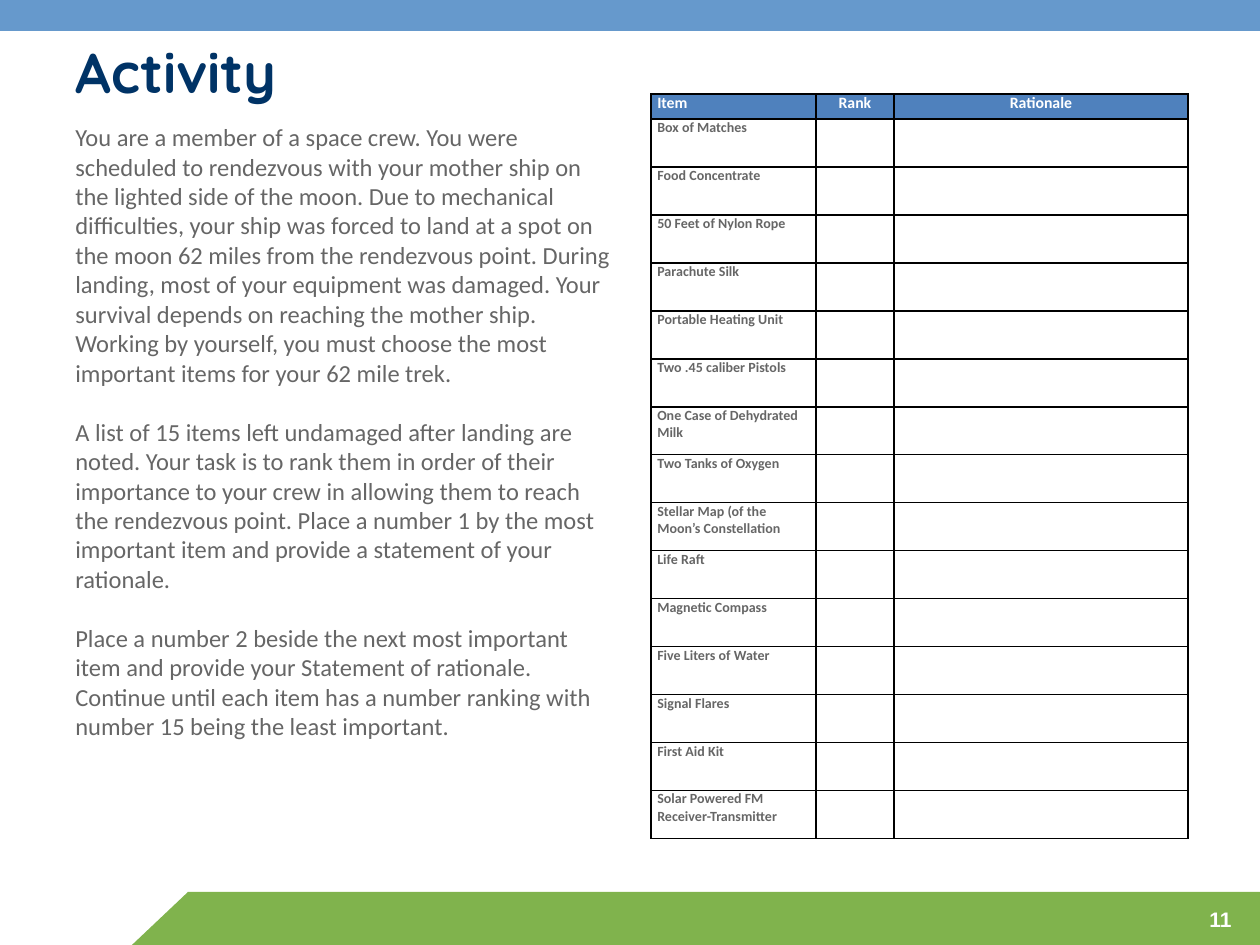
from dataclasses import dataclass

from lxml import etree
from pptx import Presentation
from pptx import util as u
from pptx.dml.color import RGBColor
from pptx.enum import shapes, text
from pptx.oxml import ns

PX = 914400 / 126


@dataclass(frozen=True)
class Theme:
    blue: str = "6699CC"
    green: str = "80B34D"
    header: str = "4F81BD"
    navy: str = "003366"
    grey: str = "666666"
    white: str = "FFFFFF"
    black: str = "000000"
    title_font: str = "Quicksand"
    body_font: str = "Calibri"
    number_font: str = "Arial"
    title_size: int = 32
    body_size: int = 14
    number_size: int = 12
    header_size: int = 9
    item_size: int = 8
    paragraph_gap: int = 17


THEME = Theme()

STORY = [
    "You are a member of a space crew. You were scheduled to rendezvous with your mother "
    "ship on the lighted side of the moon. Due to mechanical difficulties, your ship was "
    "forced to land at a spot on the moon 62 miles from the rendezvous point. During "
    "landing, most of your equipment was damaged. Your survival depends on reaching the "
    "mother ship. Working by yourself, you must choose the most important items for your "
    "62 mile trek.",
    "A list of 15 items left undamaged after landing are noted. Your task is to rank them "
    "in order of their importance to your crew in allowing them to reach the rendezvous "
    "point. Place a number 1 by the most important item and provide a statement of your "
    "rationale.",
    "Place a number 2 beside the next most important item and provide your Statement of "
    "rationale. Continue until each item has a number ranking with number 15 being the "
    "least important.",
]
HEADINGS = ["Item", "Rank", "Rationale"]
ITEMS = [
    "Box of Matches", "Food Concentrate", "50 Feet of Nylon Rope", "Parachute Silk",
    "Portable Heating Unit", "Two .45 caliber Pistols", "One Case of Dehydrated Milk",
    "Two Tanks of Oxygen", "Stellar Map (of the Moon’s Constellation", "Life Raft",
    "Magnetic Compass", "Five Liters of Water", "Signal Flares", "First Aid Kit",
    "Solar Powered FM Receiver-Transmitter",
]


def px(length):
    return u.Emu(round(length * PX))


def box(*lengths):
    return [px(length) for length in lengths]


def style(paragraph, font, size, color, bold=False, align=text.PP_ALIGN.LEFT):
    paragraph.alignment = align
    paragraph.font.name = font
    paragraph.font.size = u.Pt(size)
    paragraph.font.bold = bold
    paragraph.font.color.rgb = RGBColor.from_string(color)


def add_line(parent, tag, color, index):
    """Insert a 1 pt solid line element at the given child position."""
    line = etree.Element(ns.qn(tag), w=str(u.Pt(1)))
    fill = etree.SubElement(line, ns.qn("a:solidFill"))
    etree.SubElement(fill, ns.qn("a:srgbClr"), val=color)
    parent.insert(index, line)


def add_band(slide, kind, place, color):
    shape = slide.shapes.add_shape(kind, *box(*place))
    shape.shadow.inherit = False
    shape.fill.solid()
    shape.fill.fore_color.rgb = RGBColor.from_string(color)
    shape.line.fill.background()
    return shape


def add_text(slide, place, paragraphs, *look, **options):
    frame = slide.shapes.add_textbox(*box(*place)).text_frame
    frame.word_wrap = True
    for index, words in enumerate(paragraphs):
        paragraph = frame.add_paragraph() if index else frame.paragraphs[0]
        paragraph.text = words
        if index:
            paragraph.space_before = u.Pt(THEME.paragraph_gap)
        style(paragraph, *look, **options)
    return frame


def add_title(slide, words):
    frame = add_text(slide, (0, 31, 1260, 81), [words], THEME.title_font,
                     THEME.title_size, THEME.navy, bold=True)
    frame.margin_left = u.Inches(0.6)
    run = frame.paragraphs[0].runs[0]
    add_line(run._r.get_or_add_rPr(), "a:ln", THEME.navy, 0)


def format_cell(cell):
    cell.margin_left = cell.margin_right = u.Inches(0.05)
    cell.margin_top = cell.margin_bottom = 0
    properties = cell._tc.get_or_add_tcPr()
    for index, side in enumerate("LRTB"):
        add_line(properties, f"a:ln{side}", THEME.black, index)
    cell.fill.background()


def add_ranking_table(slide):
    widths = [165, 78, 294]
    heights = [25] + [48] * len(ITEMS)
    frame = slide.shapes.add_table(len(heights), len(widths),
                                   *box(651, 94, sum(widths), sum(heights)))
    table = frame.table
    table.first_row = table.horz_banding = False
    for column, width in zip(table.columns, widths):
        column.width = px(width)
    for row, height in zip(table.rows, heights):
        row.height = px(height)
    for cell in table.iter_cells():
        format_cell(cell)
    for column, heading in enumerate(HEADINGS):
        cell = table.cell(0, column)
        cell.text = heading
        cell.fill.solid()
        cell.fill.fore_color.rgb = RGBColor.from_string(THEME.header)
        align = text.PP_ALIGN.CENTER if column else text.PP_ALIGN.LEFT
        style(cell.text_frame.paragraphs[0], THEME.body_font, THEME.header_size,
              THEME.white, bold=True, align=align)
    for row, item in enumerate(ITEMS, start=1):
        cell = table.cell(row, 0)
        cell.text = item
        style(cell.text_frame.paragraphs[0], THEME.body_font, THEME.item_size,
              THEME.grey, bold=True)


def main():
    presentation = Presentation()
    presentation.slide_width, presentation.slide_height = box(1260, 945)
    slide = presentation.slides.add_slide(presentation.slide_layouts[6])

    kinds = shapes.MSO_SHAPE
    add_band(slide, kinds.RECTANGLE, (188, 892, 1072, 53), THEME.green)
    corner = add_band(slide, kinds.RIGHT_TRIANGLE, (132, 892, 56, 53), THEME.green)
    corner._element.spPr.xfrm.set("flipH", "1")
    add_band(slide, kinds.RECTANGLE, (0, 0, 1260, 31), THEME.blue)
    add_text(slide, (1108, 900, 136, 31), ["11"], THEME.number_font, THEME.number_size,
             THEME.white, bold=True, align=text.PP_ALIGN.RIGHT)
    add_ranking_table(slide)
    add_text(slide, (63, 116, 567, 636), STORY, THEME.body_font, THEME.body_size, THEME.grey)
    add_title(slide, "Activity")
    presentation.save("out.pptx")


if __name__ == "__main__":
    main()
